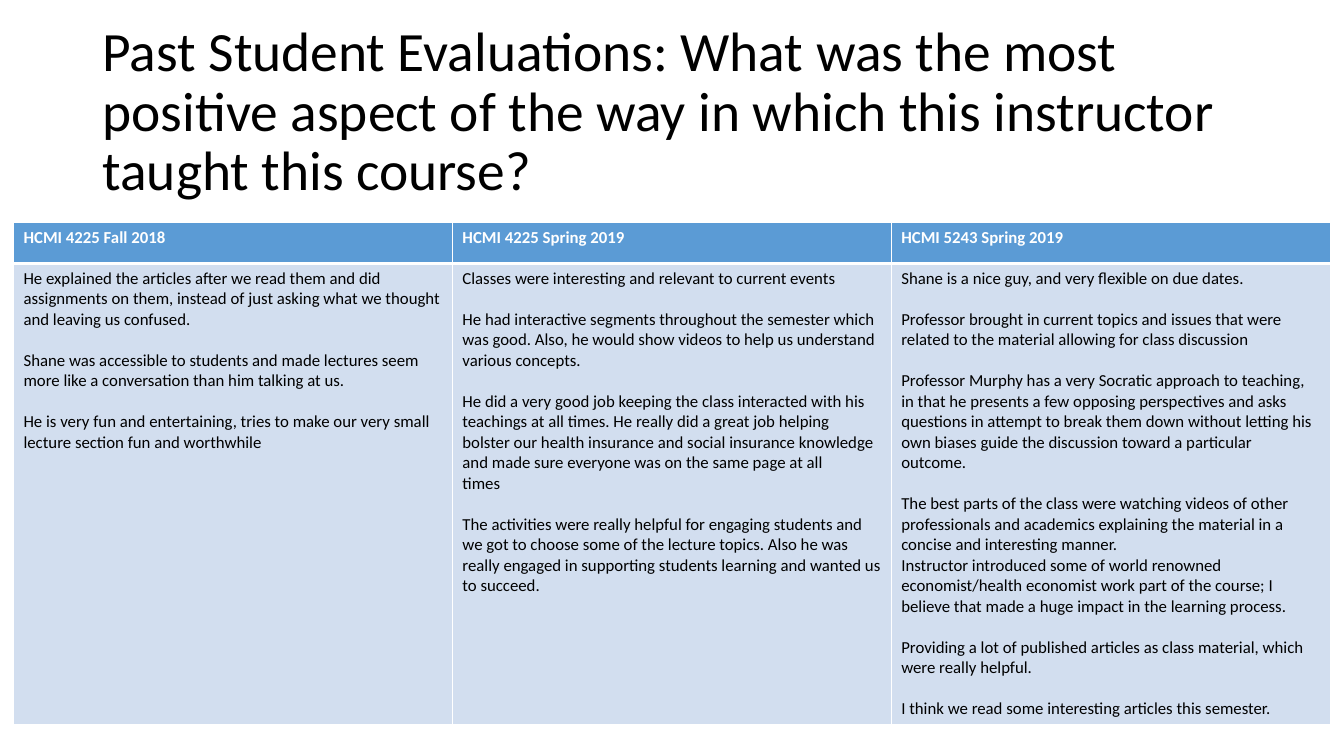
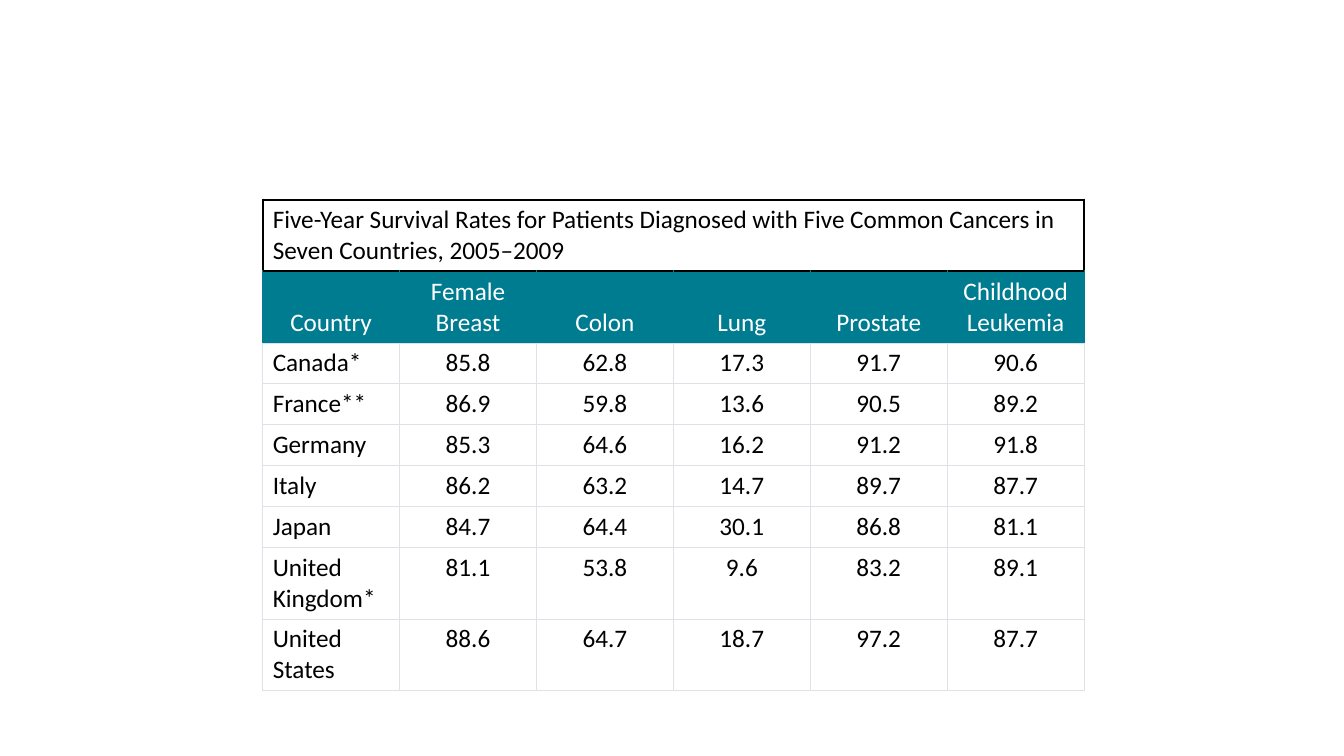
from lxml.etree import SubElement
from pptx import Presentation
from pptx.dml.color import RGBColor
from pptx.enum.text import MSO_ANCHOR as Anchor, MSO_AUTO_SIZE as AutoSize, PP_ALIGN as Align
from pptx.oxml.ns import qn
from pptx.util import Cm, Pt

BLACK, WHITE = "000000", "FFFFFF"
BLUE, PALE_BLUE = "5B9BD5", "D2DEEF"
TEAL, GREY = "007C91", "DEE2E6"

QUESTION = ("Past Student Evaluations: What was the most positive aspect of the way "
            "in which this instructor taught this course?")

COURSES = {
    "HCMI 4225 Fall 2018": [
        ["He explained the articles after we read them and did assignments on them, "
         "instead of just asking what we thought and leaving us confused."],
        ["Shane was accessible to students and made lectures seem more like a "
         "conversation than him talking at us."],
        ["He is very fun and entertaining, tries to make our very small lecture "
         "section fun and worthwhile"],
    ],
    "HCMI 4225 Spring 2019": [
        ["Classes were interesting and relevant to current events"],
        ["He had interactive segments throughout the semester which was good. Also, "
         "he would show videos to help us understand various concepts."],
        ["He did a very good job keeping the class interacted with his teachings at "
         "all times. He really did a great job helping",
         "bolster our health insurance and social insurance knowledge and made sure "
         "everyone was on the same page at all",
         "times"],
        ["The activities were really helpful for engaging students and we got to "
         "choose some of the lecture topics. Also he was",
         "really engaged in supporting students learning and wanted us to succeed."],
    ],
    "HCMI 5243 Spring 2019": [
        ["Shane is a nice guy, and very flexible on due dates."],
        ["Professor brought in current topics and issues that were related to the "
         "material allowing for class discussion"],
        ["Professor Murphy has a very Socratic approach to teaching, in that he "
         "presents a few opposing perspectives and asks questions in attempt to break "
         "them down without letting his own biases guide the discussion toward a "
         "particular outcome."],
        ["The best parts of the class were watching videos of other professionals and "
         "academics explaining the material in a concise and interesting manner.",
         "Instructor introduced some of world renowned economist/health economist work "
         "part of the course; I believe that made a huge impact in the learning process."],
        ["Providing a lot of published articles as class material, which were really "
         "helpful."],
        ["I think we read some interesting articles this semester."],
    ],
}

SURVIVAL_TITLE = ("Five-Year Survival Rates for Patients Diagnosed with Five Common "
                  "Cancers in Seven Countries, 2005–2009")
SURVIVAL_HEADS = ["Country", "Female Breast", "Colon", "Lung", "Prostate",
                  "Childhood Leukemia"]
SURVIVAL_RATES = {
    "Canada*": [85.8, 62.8, 17.3, 91.7, 90.6],
    "France**": [86.9, 59.8, 13.6, 90.5, 89.2],
    "Germany": [85.3, 64.6, 16.2, 91.2, 91.8],
    "Italy": [86.2, 63.2, 14.7, 89.7, 87.7],
    "Japan": [84.7, 64.4, 30.1, 86.8, 81.1],
    "United Kingdom*": [81.1, 53.8, 9.6, 83.2, 89.1],
    "United States": [88.6, 64.7, 18.7, 97.2, 87.7],
}


def rgb(color):
    """Turn a hex string into a colour."""
    return RGBColor.from_string(color)


def write(frame, groups, size=12, color=BLACK, bold=False, align=Align.LEFT,
          gap=0, leading=None):
    """Write groups of paragraphs, with a gap before each group but the first."""
    if isinstance(groups, str):
        groups = [[groups]]
    para = None
    for group in groups:
        for place, text in enumerate(group):
            opens_group = para is not None and place == 0
            para = frame.paragraphs[0] if para is None else frame.add_paragraph()
            para.alignment = align
            para.space_before = Pt(gap if opens_group else 0)
            if leading:
                para.line_spacing = leading
            span = para.add_run()
            span.text = text
            font = span.font
            font.name, font.size, font.bold = "Calibri", Pt(size), bold
            font.color.rgb = rgb(color)


class Deck:
    """Hold the presentation, its style and the current page."""

    def __init__(self):
        """Start an empty widescreen deck."""
        self.file = Presentation()
        self.file.slide_width, self.file.slide_height = Cm(33.87), Cm(19.05)
        self.page = None

    def add_page(self, title=None):
        """Add a page, with a title if one is given."""
        layout = self.file.slide_layouts[5 if title else 6]
        self.page = self.file.slides.add_slide(layout)
        if title:
            box = self.page.shapes.title
            box.left, box.top, box.width, box.height = Cm(2.33), Cm(1.01), Cm(29.21), Cm(3.68)
            frame = box.text_frame
            frame.word_wrap, frame.auto_size = True, AutoSize.NONE
            frame.vertical_anchor = Anchor.MIDDLE
            write(frame, title, size=39.6, leading=0.9)

    def table(self, left, top, column_width, columns, heights):
        """Add an unbanded table with equal columns and return it."""
        box = self.page.shapes.add_table(len(heights), columns, Cm(left), Cm(top),
                                         Cm(column_width * columns), Cm(sum(heights)))
        table = box.table
        table.first_row = table.horz_banding = False
        for column in table.columns:
            column.width = Cm(column_width)
        for row, height in zip(table.rows, heights):
            row.height = Cm(height)
        return table

    def cell(self, cell, text, fill, borders, anchor=Anchor.TOP, **style):
        """Fill, border and write one cell."""
        self.borders(cell, borders)
        cell.fill.solid()
        cell.fill.fore_color.rgb = rgb(fill)
        cell.vertical_anchor = anchor
        write(cell.text_frame, text, **style)

    def borders(self, cell, borders):
        """Draw the borders given as side: (colour, points)."""
        properties = cell._tc.get_or_add_tcPr()
        sides = [side for side in "LRTB" if side in borders]
        for place, side in enumerate(sides):
            color, width = borders[side]
            line = SubElement(properties, qn("a:ln" + side), w=str(Pt(width)))
            solid = SubElement(line, qn("a:solidFill"))
            SubElement(solid, qn("a:srgbClr"), val=color)
            properties.insert(place, line)


def add_evaluations(deck):
    """Build the page of student comments."""
    deck.add_page(QUESTION)
    table = deck.table(0.34, 5.61, 11.06, len(COURSES), [1.03, 11.6])
    thin, thick = (WHITE, 1), (WHITE, 3)
    for column, (course, comments) in enumerate(COURSES.items()):
        deck.cell(table.cell(0, column), course, BLUE,
                  dict(L=thin, R=thin, T=thin, B=thick), color=WHITE, bold=True)
        deck.cell(table.cell(1, column), comments, PALE_BLUE,
                  dict(L=thin, R=thin, T=thick, B=thin), gap=14.65)


def add_survival(deck):
    """Build the page of cancer survival rates."""
    deck.add_page()
    columns = len(SURVIVAL_HEADS)
    heights = [1.8, 1.8] + [1.8 if " " in country else 1.03 for country in SURVIVAL_RATES]
    table = deck.table(6.62, 5.03, 3.45, columns, heights)
    frame_line, teal_line, grey_line = (BLACK, 1.5), (TEAL, 0.6), (GREY, 0.6)

    table.cell(0, 0).merge(table.cell(0, columns - 1))
    deck.cell(table.cell(0, 0), SURVIVAL_TITLE, WHITE, dict.fromkeys("LRTB", frame_line),
              anchor=Anchor.MIDDLE, size=18)
    for column in range(1, columns):
        sides = "RTB" if column == columns - 1 else "TB"
        deck.borders(table.cell(0, column), dict.fromkeys(sides, frame_line))

    for column, head in enumerate(SURVIVAL_HEADS):
        deck.cell(table.cell(1, column), head, TEAL,
                  dict(L=teal_line, R=teal_line, T=frame_line, B=grey_line),
                  anchor=Anchor.BOTTOM, size=18, color=WHITE, align=Align.CENTER)
    for row, (country, rates) in enumerate(SURVIVAL_RATES.items(), start=2):
        for column, value in enumerate([country, *rates]):
            deck.cell(table.cell(row, column), str(value), WHITE,
                      dict.fromkeys("LRTB", grey_line), size=18,
                      align=Align.CENTER if column else Align.LEFT)


def main():
    """Build and save the deck."""
    deck = Deck()
    add_evaluations(deck)
    add_survival(deck)
    deck.file.save("out.pptx")


if __name__ == "__main__":
    main()
